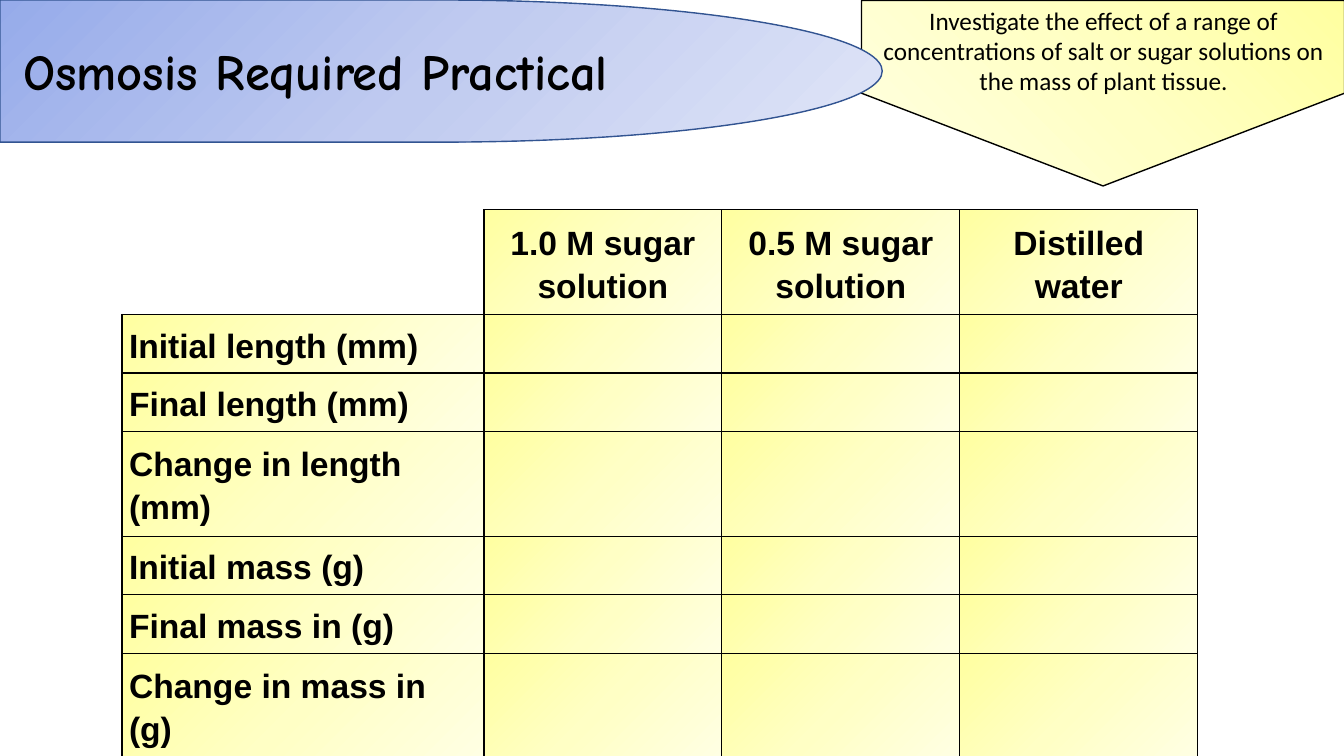
from lxml import etree
from pptx import Presentation
from pptx.dml.color import RGBColor
from pptx.enum.shapes import MSO_SHAPE
from pptx.enum.text import MSO_ANCHOR, MSO_AUTO_SIZE, PP_ALIGN
from pptx.oxml.ns import qn
from pptx.util import Inches, Pt

PENTAGON, DELAY = MSO_SHAPE.PENTAGON, MSO_SHAPE.FLOWCHART_DELAY
LEFT, CENTER = PP_ALIGN.LEFT, PP_ALIGN.CENTER
MIDDLE, GROW = MSO_ANCHOR.MIDDLE, MSO_AUTO_SIZE.SHAPE_TO_FIT_TEXT

COLORS = {"black": "000000", "blue_line": "325491"}
GRADIENTS = {
    "yellow": ["FFFFA0", "FFFFC5", "FFFFE3"],
    "blue": ["96ABEA", "C0CBF0", "E0E5F7"],
}


def gradient(name):
    """Return a three-stop gradFill element running at 45 degrees."""
    grad = etree.Element(qn("a:gradFill"), rotWithShape="1")
    stops = etree.SubElement(grad, qn("a:gsLst"))
    for pos, color in zip((0, 50000, 100000), GRADIENTS[name]):
        stop = etree.SubElement(stops, qn("a:gs"), pos=str(pos))
        etree.SubElement(stop, qn("a:srgbClr"), val=color)
    etree.SubElement(grad, qn("a:lin"), ang="2700000", scaled="0")
    return grad


def write(tf, text, align, font):
    p = tf.paragraphs[0]
    p.alignment = align
    r = p.add_run()
    r.text = text
    for key, value in font.items():
        setattr(r.font, key, value)
    r.font.color.rgb = RGBColor.from_string(COLORS["black"])
    return p


prs = Presentation()
prs.slide_width, prs.slide_height = Inches(13.33), Inches(7.5)
s = prs.slides.add_slide(prs.slide_layouts[6])

# Banner shapes
banners = [
    (PENTAGON, (10.02, -1.47, 1.84, 4.79), 90, "yellow", "black"),
    (DELAY, (0, 0, 8.75, 1.41), 0, "blue", "blue_line"),
]
for kind, box, rotation, fill, line in banners:
    sp = s.shapes.add_shape(kind, *map(Inches, box))
    sp.rotation = rotation
    sp.shadow.inherit = False
    sp.line.color.rgb = RGBColor.from_string(COLORS[line])
    sp.line.width = Pt(1)
    geometry = sp.element.spPr.find(qn("a:prstGeom"))
    geometry.addnext(gradient(fill))

# Title and aim
texts = [
    ((0.13, 0.35, 10.51, 0.71), "Osmosis Required Practical", LEFT,
     {"name": "Comic Neue", "size": Pt(36), "bold": True}),
    ((8.55, 0, 4.79, 1.01),
     "Investigate the effect of a range of concentrations of salt or sugar "
     "solutions on the mass of plant tissue.", CENTER,
     {"name": "Calibri", "size": Pt(18)}),
]
for box, text, align, font in texts:
    tf = s.shapes.add_textbox(*map(Inches, box)).text_frame
    tf.word_wrap = True
    tf.auto_size = GROW
    write(tf, text, align, font)

# Results table
headings = ["", "1.0 M sugar solution", "0.5 M sugar solution", "Distilled water"]
measures = ["Initial length (mm)", "Final length (mm)", "Change in length (mm)",
            "Initial mass (g)", "Final mass in (g)", "Change in mass in (g)"]
rows = [headings] + [[measure, "", "", ""] for measure in measures]
col_widths = [3.59, 2.36, 2.36, 2.36]
row_heights = [1.04, 0.58, 0.58, 1.04, 0.58, 0.58, 1.04]
cell_format = {
    "vertical_anchor": MIDDLE,
    "margin_left": Inches(0.07), "margin_right": Inches(0.07),
    "margin_top": Inches(0.06), "margin_bottom": Inches(0.06),
}
table_font = {"name": "Arial", "size": Pt(24), "bold": True}

table = s.shapes.add_table(
    len(rows), len(headings), Inches(1.21), Inches(2.08),
    Inches(sum(col_widths)), Inches(sum(row_heights))).table
table.first_row = table.horz_banding = False
for column, width in zip(table.columns, col_widths):
    column.width = Inches(width)
for row, height in zip(table.rows, row_heights):
    row.height = Inches(height)

for i, row in enumerate(rows):
    for j, text in enumerate(row):
        cell = table.cell(i, j)
        for key, value in cell_format.items():
            setattr(cell, key, value)
        if text:
            p = write(cell.text_frame, text, LEFT if j == 0 else CENTER, table_font)
            p.line_spacing = 1.15

        corner = i == j == 0
        tc_pr = cell._tc.get_or_add_tcPr()
        for side in ("R", "B") if corner else ("L", "R", "T", "B"):
            ln = etree.SubElement(tc_pr, qn("a:ln" + side), w=str(Pt(1)))
            solid = etree.SubElement(ln, qn("a:solidFill"))
            etree.SubElement(solid, qn("a:srgbClr"), val=COLORS["black"])
        if corner:
            cell.fill.background()
        else:
            tc_pr.append(gradient("yellow"))

prs.save("out.pptx")
